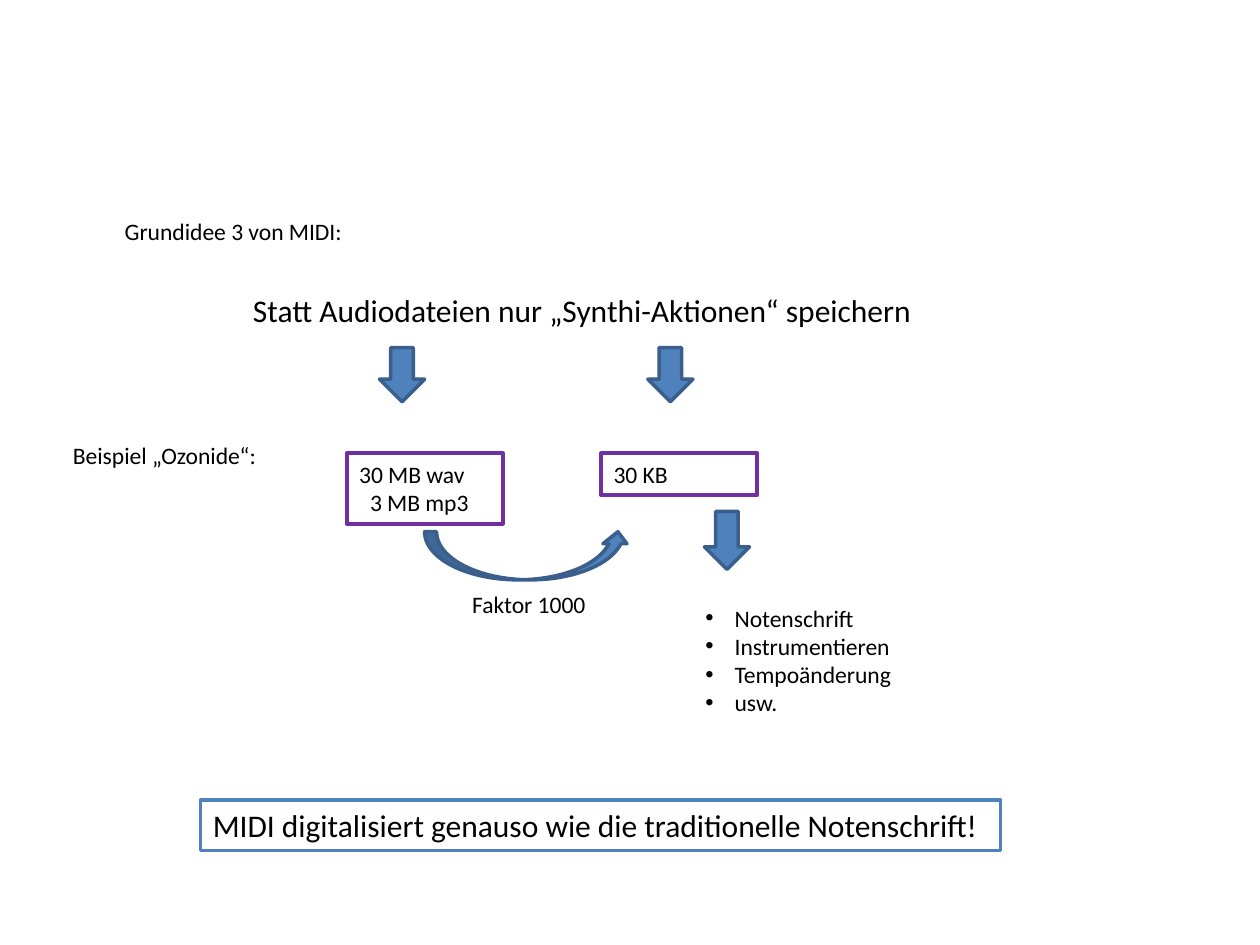
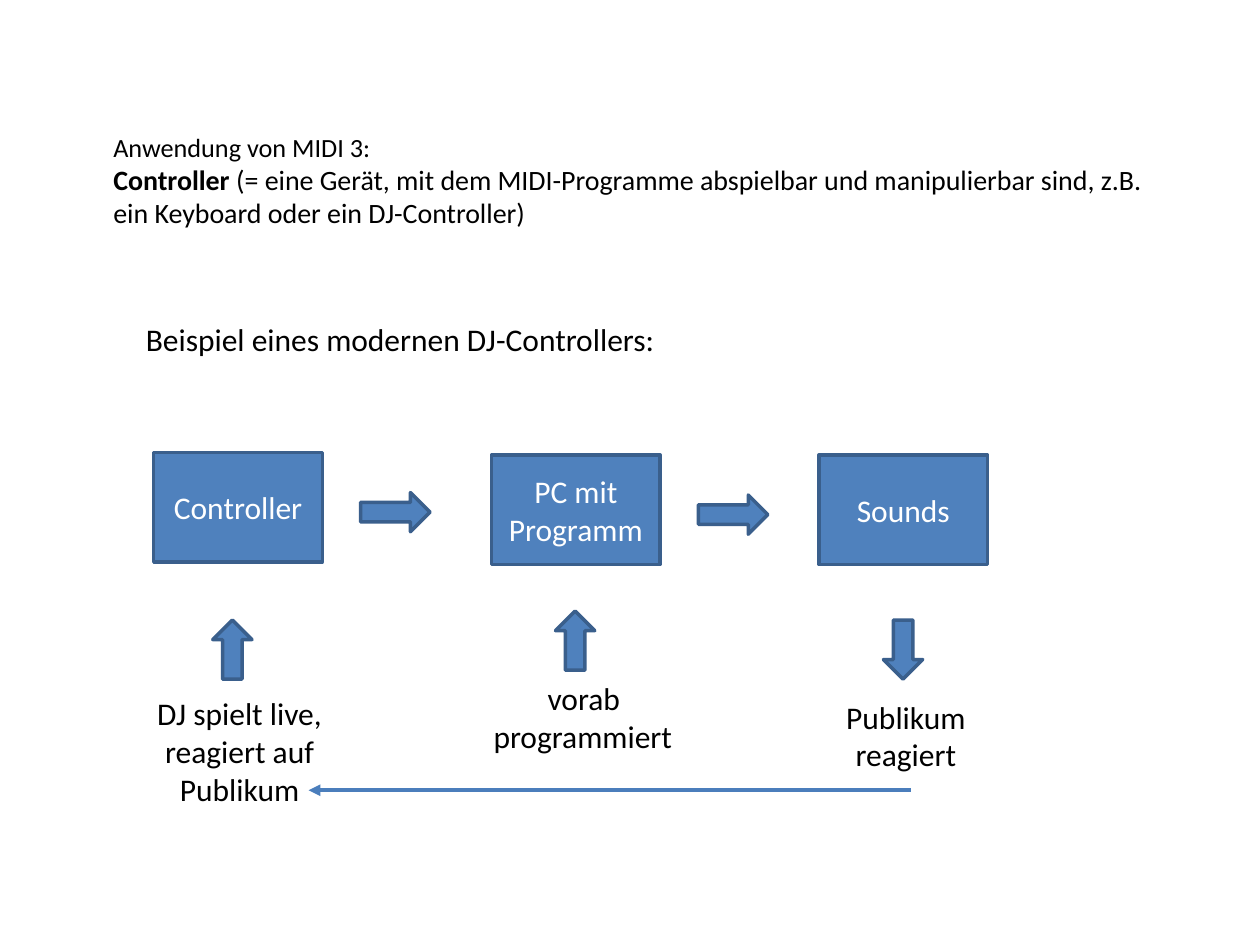
from dataclasses import dataclass

from lxml import etree
from pptx import Presentation
from pptx import util as u
from pptx.dml.color import RGBColor
from pptx.enum import shapes, text
from pptx.oxml.ns import qn

Cm, Pt = u.Cm, u.Pt
SHAPE, ALIGN = shapes.MSO_SHAPE, text.PP_ALIGN
LEFT, CENTER = ALIGN.LEFT, ALIGN.CENTER


@dataclass(frozen=True)
class Theme:
    font: str = "Calibri"
    ink: str = "000000"
    paper: str = "FFFFFF"
    blue: str = "4F81BD"
    edge: str = "3A5F8C"
    purple: str = "7030A0"
    feedback: str = "4B7EBC"
    small: float = 13.5
    heading: float = 15
    definition: float = 16
    large: float = 18
    outline: float = 2
    strong: float = 2.25


THEME = Theme()

# Content: places are left, top, width, height in centimetres
IDEA_TITLE = ("Grundidee 3 von MIDI:", (2.26, 4.24, 4.95, 0.84))
IDEA_LABELS = [
    ("Statt Audiodateien nur „Synthi-Aktionen“ speichern", (4.85, 5.74, 13.94, 1.02), THEME.large),
    ("Beispiel „Ozonide“:", (1.22, 8.76, 4.34, 0.84), THEME.small),
    ("Faktor 1000", (9.27, 11.76, 2.84, 0.84), THEME.small),
]
IDEA_ARROWS = [
    (SHAPE.DOWN_ARROW, (7.65, 7.01, 0.91, 1.09)),
    (SHAPE.DOWN_ARROW, (13.06, 7.01, 0.91, 1.09)),
    (SHAPE.CURVED_UP_ARROW, (8.56, 10.72, 4.14, 0.97)),
    (SHAPE.DOWN_ARROW, (14.2, 10.31, 0.91, 1.17)),
]
FILE_SIZES = [
    (["30 MB wav", "3 MB mp3"], (6.99, 9.14, 3.15, 1.42)),
    (["30 KB"], (12.12, 9.14, 3.15, 0.84)),
]
SECOND_LINE_INDENT = 0.22
BENEFITS = ["Notenschrift", "Instrumentieren", "Tempoänderung", "usw."]
BENEFITS_PLACE = (13.97, 12.04, 4.32, 2.57)
BULLET_INDENT = 0.59
CONCLUSION = "MIDI digitalisiert genauso wie die traditionelle Notenschrift!"
CONCLUSION_PLACE = (4.04, 16.13, 16.13, 1.02)

CONTROLLER_TITLE = "Anwendung von MIDI 3:"
CONTROLLER_TERM = "Controller"
CONTROLLER_MEANING = (" (= eine Gerät, mit dem MIDI-Programme abspielbar und manipulierbar sind, "
                      "z.B. ein Keyboard oder ein DJ-Controller)")
CONTROLLER_TITLE_PLACE = (2.03, 2.51, 21.67, 2.26)
EXAMPLE = ("Beispiel eines modernen DJ-Controllers:", (2.69, 6.32, 13, 1.02))
STAGES = [("Controller", 3.1, 9.12), ("PC mit Programm", 9.91, 9.17), ("Sounds", 16.51, 9.17)]
STAGE_SIZE = (3.4, 2.21)
FLOW_SIZE, FLOW_GAP, FLOW_DROP = (1.4, 0.79), 0.77, 0.81
ROLE_ARROW_SIZE = (0.79, 1.19)
# Arrow position, its rotation, caption place, caption lines
ROLES = [
    ((4.29, 12.5), 0, (2.92, 13.87, 3.89, 2.57),
     [("DJ spielt live,", LEFT), ("reagiert auf", CENTER), ("Publikum", CENTER)]),
    ((11.2, 12.32), 0, (9.7, 13.56, 4.14, 1.8),
     [("vorab", CENTER), ("programmiert", LEFT)]),
    ((17.81, 12.5), 180, (16.81, 13.94, 3.1, 1.8),
     [("Publikum", LEFT), ("reagiert", CENTER)]),
]
FEEDBACK_START, FEEDBACK_END, FEEDBACK_Y = 18.36, 6.22, 15.93


# Shared helpers
def rgb(value):
    return RGBColor.from_string(value)


def lengths(place):
    return [Cm(value) for value in place]


def add_span(para, words, size, color=THEME.ink, bold=False):
    span = para.add_run()
    span.text = words
    span.font.name = THEME.font
    span.font.size = Pt(size)
    span.font.bold = bold
    span.font.color.rgb = rgb(color)


def write(frame, lines, size, color=THEME.ink, wrap=False, anchor=text.MSO_ANCHOR.TOP):
    """Fill a frame with (words, alignment) lines and return its paragraphs."""
    frame.word_wrap = wrap
    frame.vertical_anchor = anchor
    for index, (words, align) in enumerate(lines):
        para = frame.add_paragraph() if index else frame.paragraphs[0]
        para.alignment = align
        add_span(para, words, size, color)
    return frame.paragraphs


def indent(para, left, first=0):
    props = para._p.get_or_add_pPr()
    props.set("marL", str(Cm(left)))
    props.set("indent", str(Cm(first)))
    return props


def add_label(page, lines, place, size, wrap=False):
    box = page.shapes.add_textbox(*lengths(place))
    return write(box.text_frame, lines, size, wrap=wrap)


def add_figure(page, kind, place, fill=THEME.blue, line=THEME.edge, width=THEME.outline):
    figure = page.shapes.add_shape(kind, *lengths(place))
    figure.shadow.inherit = False
    if fill:
        figure.fill.solid()
        figure.fill.fore_color.rgb = rgb(fill)
    else:
        figure.fill.background()
    figure.line.color.rgb = rgb(line)
    figure.line.width = Pt(width)
    return figure


def add_page(deck, title, place, size, wrap=False):
    page = deck.slides.add_slide(deck.slide_layouts[5])
    holder = page.shapes.title
    holder.left, holder.top, holder.width, holder.height = lengths(place)
    holder.text_frame.auto_size = text.MSO_AUTO_SIZE.NONE
    write(holder.text_frame, [(title, LEFT)], size, wrap=wrap)
    return page


# Slide 1: storing actions instead of audio
def build_idea(deck):
    page = add_page(deck, *IDEA_TITLE, THEME.small)
    for words, place, size in IDEA_LABELS:
        add_label(page, [(words, LEFT)], place, size)
    for kind, place in IDEA_ARROWS:
        add_figure(page, kind, place)

    for lines, place in FILE_SIZES:
        box = add_figure(page, SHAPE.RECTANGLE, place, None, THEME.purple, THEME.strong)
        paras = write(box.text_frame, [(words, LEFT) for words in lines], THEME.small, wrap=True)
        for para in paras[1:]:
            indent(para, SECOND_LINE_INDENT)

    for para in add_label(page, [(words, LEFT) for words in BENEFITS], BENEFITS_PLACE, THEME.small):
        props = indent(para, BULLET_INDENT, -BULLET_INDENT)
        etree.SubElement(props, qn("a:buFont"), typeface="Arial")
        etree.SubElement(props, qn("a:buChar"), char="•")

    box = add_figure(page, SHAPE.RECTANGLE, CONCLUSION_PLACE, THEME.paper, THEME.blue)
    write(box.text_frame, [(CONCLUSION, LEFT)], THEME.large)


# Slide 2: from the controller to the audience and back
def build_controller(deck):
    page = add_page(deck, CONTROLLER_TITLE, CONTROLLER_TITLE_PLACE, THEME.heading, wrap=True)
    para = page.shapes.title.text_frame.add_paragraph()
    para.alignment = LEFT
    add_span(para, CONTROLLER_TERM, THEME.definition, bold=True)
    add_span(para, CONTROLLER_MEANING, THEME.definition)
    words, place = EXAMPLE
    add_label(page, [(words, LEFT)], place, THEME.large, wrap=True)

    for index, (name, left, top) in enumerate(STAGES):
        box = add_figure(page, SHAPE.RECTANGLE, (left, top, *STAGE_SIZE))
        write(box.text_frame, [(name, CENTER)], THEME.large, THEME.paper,
              wrap=True, anchor=text.MSO_ANCHOR.MIDDLE)
        if index < len(STAGES) - 1:
            flow_left = left + STAGE_SIZE[0] + FLOW_GAP
            add_figure(page, SHAPE.RIGHT_ARROW, (flow_left, top + FLOW_DROP, *FLOW_SIZE))

    for position, rotation, place, lines in ROLES:
        arrow = add_figure(page, SHAPE.UP_ARROW, (*position, *ROLE_ARROW_SIZE))
        arrow.rotation = rotation
        add_label(page, lines, place, THEME.large)

    # Feedback from the audience to the DJ
    feedback = page.shapes.add_connector(
        shapes.MSO_CONNECTOR.STRAIGHT,
        *lengths((FEEDBACK_START, FEEDBACK_Y, FEEDBACK_END, FEEDBACK_Y)))
    feedback.line.color.rgb = rgb(THEME.feedback)
    feedback.line.width = Pt(THEME.strong)
    etree.SubElement(feedback.line._get_or_add_ln(), qn("a:tailEnd"), type="triangle")
    etree.SubElement(feedback._element.spPr, qn("a:effectLst"))


def main():
    deck = Presentation()
    deck.slide_width, deck.slide_height = Cm(25.4), Cm(19.05)
    build_idea(deck)
    build_controller(deck)
    deck.save("out.pptx")


if __name__ == "__main__":
    main()
